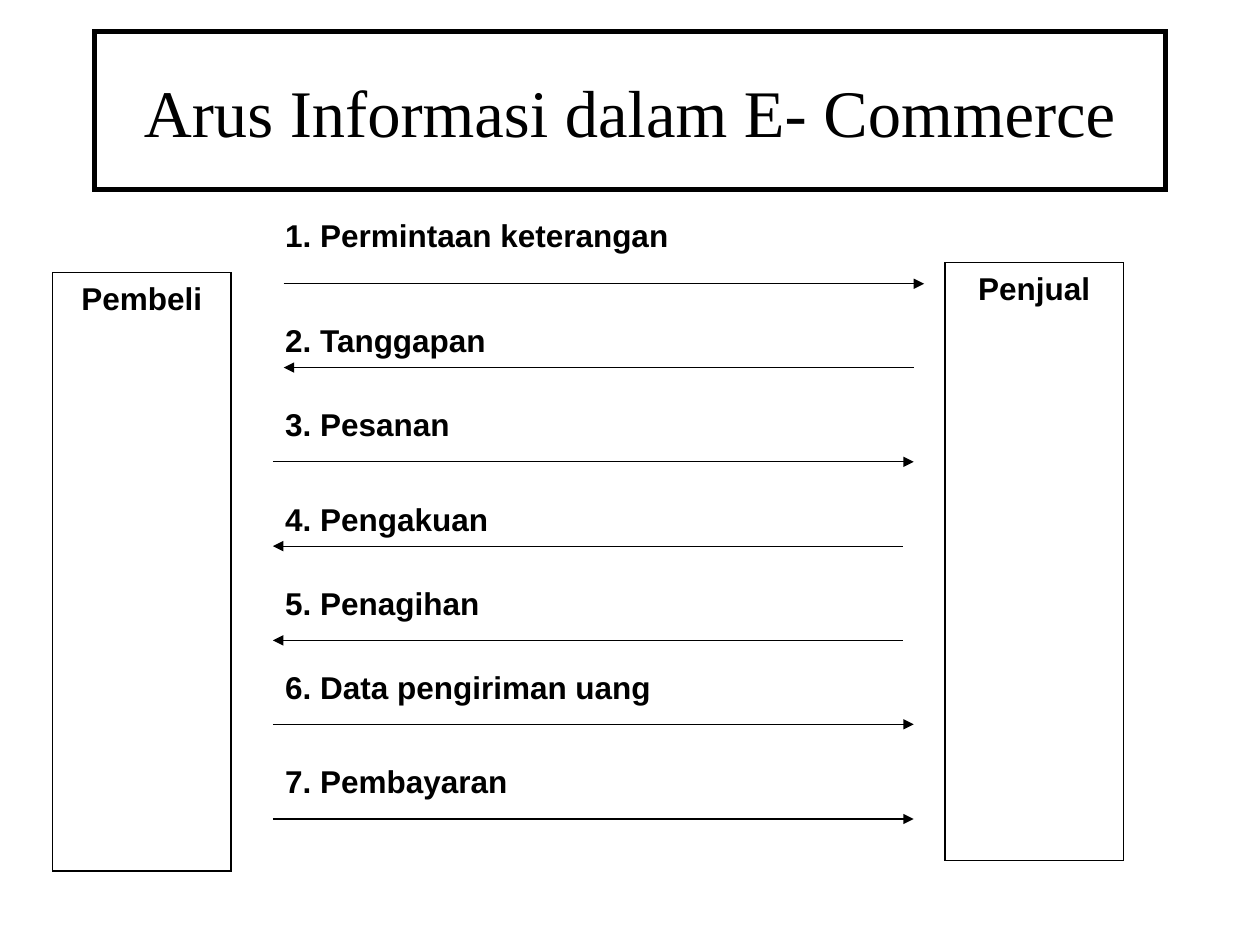
"""Build the slide on information flow between buyer and seller in e-commerce."""
from lxml.etree import SubElement
from pptx import Presentation
from pptx.dml.color import RGBColor
from pptx.enum.shapes import MSO_CONNECTOR as Connector, MSO_SHAPE as Shape
from pptx.enum.text import MSO_ANCHOR as Anchor, MSO_AUTO_SIZE as AutoSize, PP_ALIGN as Align
from pptx.oxml.ns import qn
from pptx.util import Cm, Pt

BLACK = RGBColor(0, 0, 0)


def write(frame, text, font_name, size, bold, align):
    frame.text = text
    para = frame.paragraphs[0]
    para.alignment = align
    para.font.name = font_name
    para.font.size = Pt(size)
    para.font.bold = bold
    para.font.color.rgb = BLACK


def outline(shape, width):
    shape.line.color.rgb = BLACK
    shape.line.width = Pt(width)
    SubElement(shape.line._get_or_add_ln(), qn("a:miter"), lim="800000")


deck = Presentation()
deck.slide_width, deck.slide_height = Cm(25.4), Cm(19.05)
slide = deck.slides.add_slide(deck.slide_layouts[5])

title = slide.shapes.title
title.left, title.top, title.width, title.height = Cm(1.9), Cm(0.64), Cm(21.6), Cm(3.18)
outline(title, 3)
write(title.text_frame, "Arus Informasi dalam E- Commerce", "Times New Roman", 38, False, Align.CENTER)
title.text_frame.vertical_anchor = Anchor.MIDDLE
title.text_frame.auto_size = AutoSize.NONE

for name, left, top in [("Pembeli", 1.06, 5.5), ("Penjual", 19.05, 5.29)]:
    party = slide.shapes.add_shape(Shape.RECTANGLE, Cm(left), Cm(top), Cm(3.6), Cm(12.06))
    party.shadow.inherit = False
    party.fill.background()
    outline(party, 0.75)
    write(party.text_frame, name, "Arial", 18, True, Align.CENTER)
    party.text_frame.vertical_anchor = Anchor.TOP

messages = [
    ("1. Permintaan keterangan", 8.26, 4.23, 5.72, 5.72, 18.63),
    ("2. Tanggapan", 4.7, 6.35, 7.41, 18.42, 5.72),
    ("3. Pesanan", 4.1, 8.04, 9.31, 5.5, 18.42),
    ("4. Pengakuan", 4.7, 9.95, 11.01, 18.2, 5.5),
    ("5. Penagihan", 4.5, 11.64, 12.91, 18.2, 5.5),
    ("6. Data pengiriman uang", 8.1, 13.34, 14.6, 5.5, 18.42),
    ("7. Pembayaran", 5.1, 15.24, 16.51, 5.5, 18.42),
]
for text, width, top, arrow_y, start, end in messages:
    label = slide.shapes.add_textbox(Cm(5.5), Cm(top), Cm(width), Cm(1.02))
    write(label.text_frame, text, "Arial", 18, True, Align.LEFT)
    label.text_frame.word_wrap = True
    label.text_frame.auto_size = AutoSize.SHAPE_TO_FIT_TEXT

    arrow = slide.shapes.add_connector(Connector.STRAIGHT, Cm(start), Cm(arrow_y), Cm(end), Cm(arrow_y))
    outline(arrow, 0.75)
    SubElement(arrow.line._get_or_add_ln(), qn("a:tailEnd"), type="triangle")
    SubElement(arrow._element.spPr, qn("a:effectLst"))

deck.save("out.pptx")
